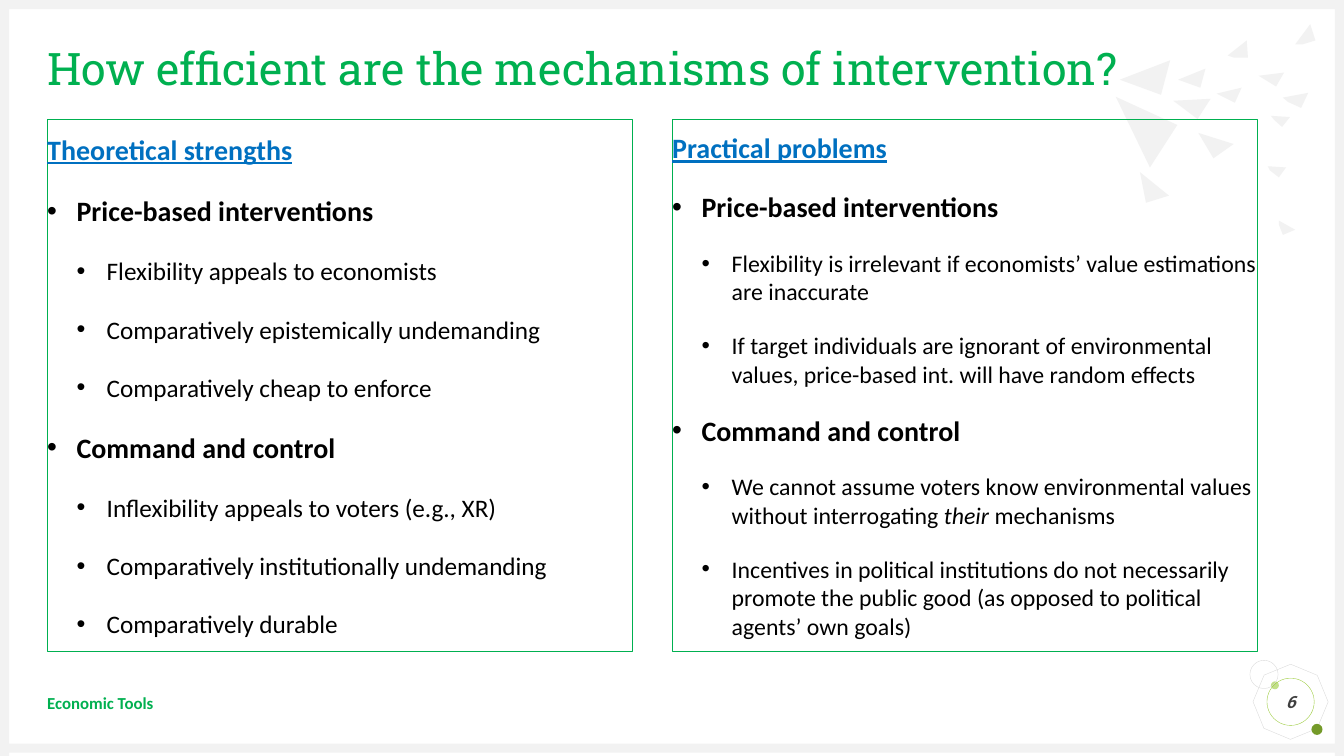
from lxml import etree
from pptx import Presentation
from pptx.dml.color import RGBColor
from pptx.enum import shapes, text
from pptx.oxml import ns
from pptx.util import Cm, Pt

TITLE = "How efficient are the mechanisms of intervention?"
FOOTER = "Economic Tools"
PAGE_NUMBER = "6"

# Each panel: heading, then (topic, points); a point is a list of (words, italic)
STRENGTHS = ("Theoretical strengths", [
    ("Price-based interventions", [
        [("Flexibility appeals to economists", False)],
        [("Comparatively epistemically undemanding", False)],
        [("Comparatively cheap to enforce", False)],
    ]),
    ("Command and control", [
        [("Inflexibility appeals to voters (e.g., XR)", False)],
        [("Comparatively institutionally undemanding", False)],
        [("Comparatively durable", False)],
    ]),
])
PROBLEMS = ("Practical problems", [
    ("Price-based interventions", [
        [("Flexibility is irrelevant if economists’ value estimations are inaccurate", False)],
        [("If target individuals are ignorant of environmental values, "
          "price-based int. will have random effects", False)],
    ]),
    ("Command and control", [
        [("We cannot assume voters know environmental values without interrogating ", False),
         ("their ", True), ("mechanisms", False)],
        [("Incentives in political institutions do not necessarily promote the public good "
          "(as opposed to political agents’ own goals)", False)],
    ]),
])

# Corner points of the scattered shards, in cm
SHARDS = [
    [(29.49, 1.52), (29.26, 2.39), (28.22, 2.01)],
    [(30.51, 2.49), (30.18, 3.0), (29.57, 2.54)],
    [(30.38, 1.73), (30.25, 2.21), (29.69, 2.01)],
    [(31.29, 2.21), (31.12, 2.59), (30.66, 2.36)],
    [(31.42, 1.02), (31.45, 1.45), (31.09, 1.45), (30.94, 1.4)],
    [(32.51, 2.95), (32.31, 3.2), (32.11, 3.02), (32.03, 2.92)],
    [(33.02, 0.61), (33.15, 1.02), (32.82, 1.12), (32.64, 1.12)],
    [(32.36, 1.83), (32.16, 2.18), (31.72, 1.91)],
    [(32.97, 2.34), (32.79, 2.72), (32.46, 2.57), (32.33, 2.46)],
    [(29.67, 3.15), (28.98, 4.22), (28.12, 2.44)],
    [(31.09, 3.63), (30.58, 3.99), (30.2, 3.35)],
    [(32.41, 4.22), (32.23, 4.47), (32.0, 4.29), (31.95, 4.19)],
    [(29.46, 4.93), (28.88, 5.11), (28.73, 4.34)],
    [(32.64, 5.79), (32.33, 5.92), (32.23, 5.66), (32.23, 5.56)],
]

THEME = {
    "green": "00B050", "blue": "0070C0", "ink": "000000", "number": "404040",
    "pale": "F2F2F2", "outline": "D9D9D9", "ring": "9ACB39",
    "light dot": "C2E088", "dark dot": "749A29",
    "body": "Calibri", "display": "Roboto Slab",
    "title": 32, "heading": 20, "small": 12,
}
WIDTH, HEIGHT, EDGE = 33.87, 19.05, 0.23
MARGIN = 1.19
PANEL_TOP, PANEL_WIDTH, PANEL_HEIGHT, PANEL_PITCH = 3.02, 14.76, 13.39, 15.75
INDENTS = [(0.74, 0.74), (1.5, 0.76)]  # text margin and bullet hang by level


def color(name):
    return RGBColor.from_string(THEME[name])


def paint(shape, fill=None, line=None, weight=0.25):
    shape.shadow.inherit = False
    if fill:
        shape.fill.solid()
        shape.fill.fore_color.rgb = color(fill)
    else:
        shape.fill.background()
    if line:
        shape.line.color.rgb = color(line)
        shape.line.width = Pt(weight)
    else:
        shape.line.fill.background()
    return shape


def add_preset(slide, kind, box, **style):
    return paint(slide.shapes.add_shape(kind, *map(Cm, box)), **style)


def open_frame(shape):
    """Return the text frame, wrapped, centred vertically and without insets."""
    frame = shape.text_frame
    settings = {"word_wrap": True, "vertical_anchor": text.MSO_ANCHOR.MIDDLE,
                "margin_left": 0, "margin_right": 0, "margin_top": 0, "margin_bottom": 0}
    for name, value in settings.items():
        setattr(frame, name, value)
    return frame


def add_words(paragraph, words, size, ink, face="body", **flags):
    run = paragraph.add_run()
    run.text = words
    run.font.color.rgb = color(ink)
    for name, value in {"size": Pt(size), "name": THEME[face], **flags}.items():
        setattr(run.font, name, value)


def set_bullet(paragraph, level):
    margin, hang = INDENTS[level]
    paragraph.level = level
    properties = paragraph._p.get_or_add_pPr()
    properties.set("marL", str(Cm(margin)))
    properties.set("indent", str(-Cm(hang)))
    etree.SubElement(properties, ns.qn("a:buFont")).set("typeface", "Arial")
    etree.SubElement(properties, ns.qn("a:buChar")).set("char", "•")


def add_panel(slide, column, content, point_size, gap):
    heading, topics = content
    box = (MARGIN + column * PANEL_PITCH, PANEL_TOP, PANEL_WIDTH, PANEL_HEIGHT)
    frame = open_frame(add_preset(slide, shapes.MSO_SHAPE.RECTANGLE, box,
                                  line="green", weight=0.75))
    first = frame.paragraphs[0]
    first.alignment = text.PP_ALIGN.LEFT
    add_words(first, heading, THEME["heading"], "blue", bold=True, underline=True)

    def add_item(level):
        paragraph = frame.add_paragraph()
        set_bullet(paragraph, level)
        paragraph.alignment = text.PP_ALIGN.LEFT
        paragraph.space_before = Pt(gap)
        return paragraph

    for topic, points in topics:
        add_words(add_item(0), topic, THEME["heading"], "ink", bold=True)
        for point in points:
            item = add_item(1)
            for words, italic in point:
                add_words(item, words, point_size, "ink", italic=italic)


def add_decoration(slide):
    octagon = add_preset(slide, shapes.MSO_SHAPE.OCTAGON, (31.65, 16.81, 1.75, 1.75),
                         line="outline")
    octagon.rotation = 22.7
    for left, top, size, style in [
        (32.03, 17.17, 0.2, {"fill": "light dot"}),
        (33.05, 18.24, 0.28, {"fill": "dark dot"}),
        (31.5, 16.64, 0.71, {"line": "outline"}),
    ]:
        add_preset(slide, shapes.MSO_SHAPE.OVAL, (left, top, size, size), **style)
    for box in [
        (0, HEIGHT - EDGE - 0.08, WIDTH, EDGE), (0, 0, WIDTH, EDGE),
        (0, 0, EDGE, HEIGHT), (WIDTH - EDGE, 0, EDGE, HEIGHT),
    ]:
        add_preset(slide, shapes.MSO_SHAPE.RECTANGLE, box, fill="pale")
    for shard in SHARDS:
        start, *corners = [(Cm(x), Cm(y)) for x, y in shard]
        builder = slide.shapes.build_freeform(*start)
        builder.add_line_segments(corners, close=True)
        paint(builder.convert_to_shape(), fill="pale")


def main():
    deck = Presentation()
    deck.slide_width, deck.slide_height = Cm(WIDTH), Cm(HEIGHT)
    slide = deck.slides.add_slide(deck.slide_layouts[6])
    add_decoration(slide)
    add_panel(slide, 0, STRENGTHS, point_size=18, gap=20)

    title = open_frame(slide.shapes.add_textbox(
        *map(Cm, (MARGIN, 1.19, 31.5, 1.19)))).paragraphs[0]
    title.line_spacing = 0.9
    add_words(title, TITLE, THEME["title"], "green", "display")

    footer = open_frame(slide.shapes.add_textbox(
        *map(Cm, (MARGIN, 17.2, 24.41, 1.02)))).paragraphs[0]
    add_words(footer, FOOTER, THEME["small"], "green", bold=True)

    badge = add_preset(slide, shapes.MSO_SHAPE.OVAL, (31.93, 17.09, 1.19, 1.19), line="ring")
    number = open_frame(badge).paragraphs[0]
    number.alignment = text.PP_ALIGN.CENTER
    add_words(number, PAGE_NUMBER, THEME["small"], "number", "display", bold=True, italic=True)

    add_panel(slide, 1, PROBLEMS, point_size=17, gap=18)
    deck.save("out.pptx")


if __name__ == "__main__":
    main()
